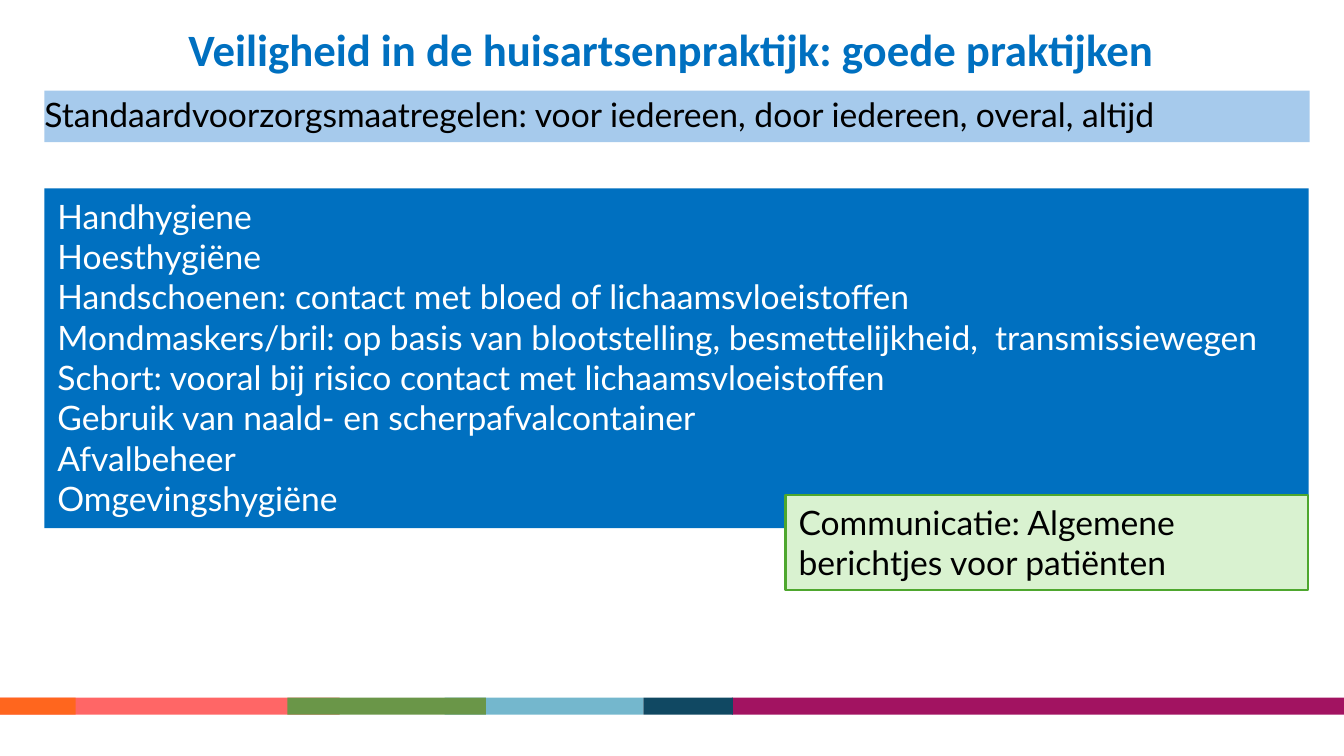
from lxml import etree
from pptx import Presentation
from pptx.dml.color import RGBColor
from pptx.enum.shapes import MSO_SHAPE
from pptx.enum.text import MSO_ANCHOR, PP_ALIGN
from pptx.oxml.ns import qn
from pptx.util import Inches, Pt


def color(hex_value):
    return RGBColor.from_string(hex_value)


def add_box(left, top, width, height, fill, lines=(), text_color="000000", margins=(0.13, 0.07)):
    shape = slide.shapes.add_shape(
        MSO_SHAPE.RECTANGLE, Inches(left), Inches(top), Inches(width), Inches(height))
    shape.shadow.inherit = False
    shape.fill.solid()
    shape.fill.fore_color.rgb = color(fill)
    shape.line.fill.background()
    frame = shape.text_frame
    frame.word_wrap = True
    frame.vertical_anchor = MSO_ANCHOR.TOP
    frame.margin_left = frame.margin_right = Inches(margins[0])
    frame.margin_top = frame.margin_bottom = Inches(margins[1])
    for index, line in enumerate(lines):
        paragraph = frame.paragraphs[0] if index == 0 else frame.add_paragraph()
        paragraph.alignment = PP_ALIGN.LEFT
        run = paragraph.add_run()
        run.text = line
        run.font.name = "Lato"
        run.font.size = Pt(24)
        run.font.color.rgb = color(text_color)
    return shape


presentation = Presentation()
presentation.slide_width = Inches(13.33)
presentation.slide_height = Inches(7.5)
slide = presentation.slides.add_slide(presentation.slide_layouts[6])

# Coloured strip at the bottom: left, width, colour, opacity in percent
strip = [
    (7.26, 6.07, "A21361", 100),
    (4.41, 1.97, "1888AD", 60),
    (0, 3.37, "FF0000", 60),
    (0, 0.75, "FF6600", 70),
    (6.38, 0.89, "104862", 100),
    (2.85, 1.97, "6A9648", 100),
]
for left, width, fill, opacity in strip:
    band = add_box(left, 6.92, width, 0.17, fill)
    if opacity < 100:
        fill_color = band.fill._xPr.find(qn("a:solidFill"))[0]
        etree.SubElement(fill_color, qn("a:alpha")).set("val", str(opacity * 1000))

# Title
title = slide.shapes.add_textbox(Inches(0.36), Inches(0.26), Inches(12.6), Inches(0.52))
title_frame = title.text_frame
title_frame.word_wrap = True
title_frame.vertical_anchor = MSO_ANCHOR.MIDDLE
title_frame.margin_left = title_frame.margin_right = 0
title_frame.margin_top = title_frame.margin_bottom = 0
paragraph = title_frame.paragraphs[0]
paragraph.alignment = PP_ALIGN.CENTER
paragraph.line_spacing = 0.9
run = paragraph.add_run()
run.text = "Veiligheid in de huisartsenpraktijk: goede praktijken"
run.font.name = "Calibri"
run.font.size = Pt(32)
run.font.bold = True
run.font.color.rgb = color("0070C0")

# Subtitle bar
subtitle = add_box(
    0.44, 0.9, 12.55, 0.51, "A6CAEC",
    ["Standaardvoorzorgsmaatregelen: voor iedereen, door iedereen, overal, altijd"],
    margins=(0, 0))
subtitle.text_frame.vertical_anchor = MSO_ANCHOR.MIDDLE
subtitle.text_frame.paragraphs[0].line_spacing = 0.9

# Precautions
precautions = [
    "Handhygiene",
    "Hoesthygiëne",
    "Handschoenen: contact met bloed of lichaamsvloeistoffen",
    "Mondmaskers/bril: op basis van blootstelling, besmettelijkheid,  transmissiewegen",
    "Schort: vooral bij risico contact met lichaamsvloeistoffen",
    "Gebruik van naald- en scherpafvalcontainer",
    "Afvalbeheer",
    "Omgevingshygiëne",
]
add_box(0.44, 1.87, 12.54, 3.37, "0070C0", precautions, "FFFFFF")

# Communication note
note = add_box(7.79, 4.91, 5.18, 0.94, "D9F2D0",
               ["Communicatie: Algemene berichtjes voor patiënten"])
note.line.color.rgb = color("4EA72E")
note.line.width = Pt(1.5)

presentation.save("out.pptx")
